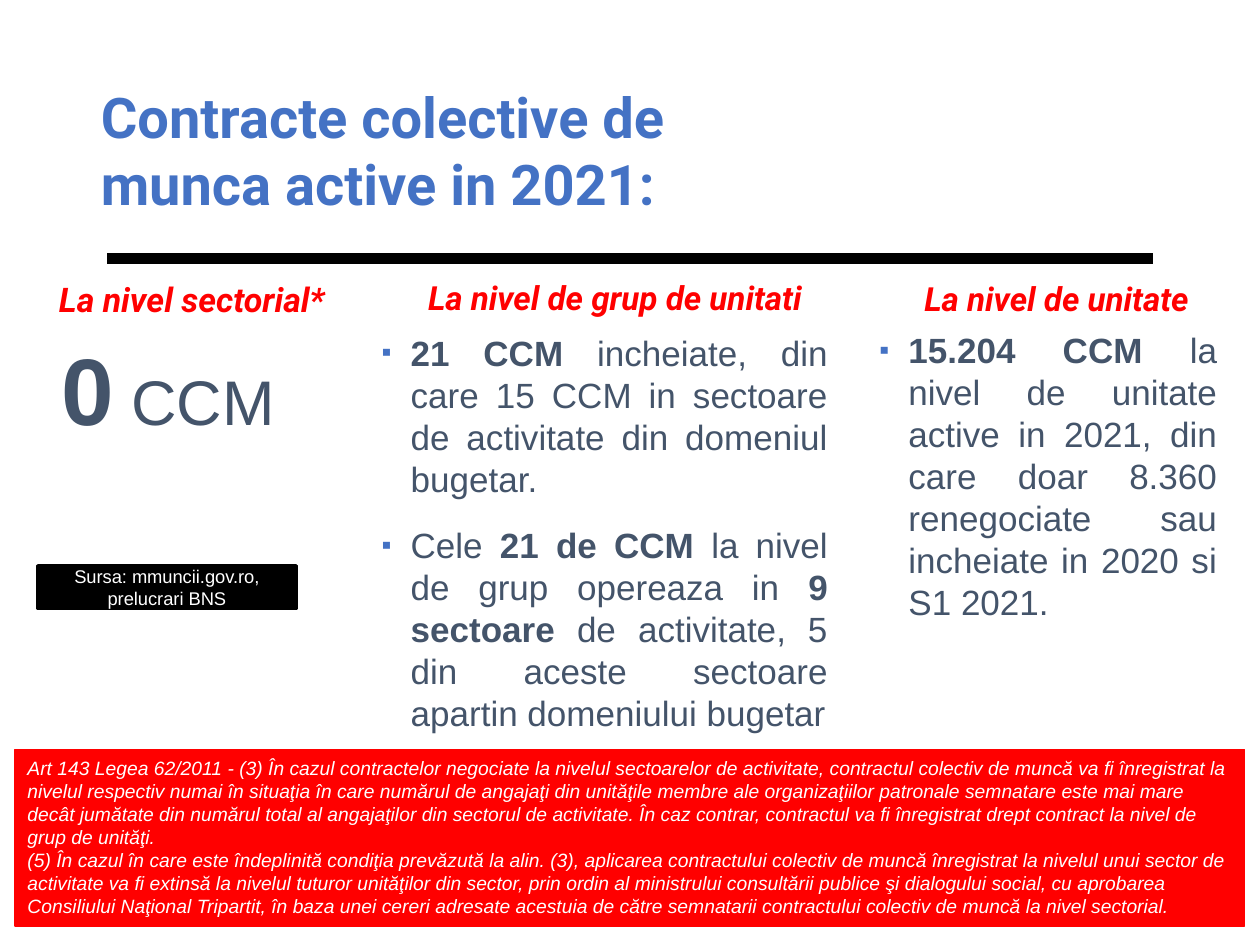
from pptx import Presentation
from pptx.dml.color import RGBColor
from pptx.enum.shapes import MSO_CONNECTOR, MSO_SHAPE
from pptx.enum.text import MSO_ANCHOR, MSO_AUTO_SIZE, PP_ALIGN
from pptx.oxml.ns import qn
from pptx.util import Inches, Pt
from lxml import etree

LEFT, MID, JUST = PP_ALIGN.LEFT, PP_ALIGN.CENTER, PP_ALIGN.JUSTIFY
TOP, CORE, BASE = MSO_ANCHOR.TOP, MSO_ANCHOR.MIDDLE, MSO_ANCHOR.BOTTOM
RECT, LINE = MSO_SHAPE.RECTANGLE, MSO_CONNECTOR.STRAIGHT
GROW = MSO_AUTO_SIZE.SHAPE_TO_FIT_TEXT
BLUE, SLATE, RED, BLACK, WHITE = "4472C4", "44546A", "FF0000", "000000", "FFFFFF"

LAW = [
    "Art 143 Legea 62/2011 - (3) În cazul contractelor negociate la nivelul "
    "sectoarelor de activitate, contractul colectiv de muncă va fi înregistrat "
    "la nivelul respectiv numai în situaţia în care numărul de angajaţi din "
    "unităţile membre ale organizaţiilor patronale semnatare este mai mare "
    "decât jumătate din numărul total al angajaţilor din sectorul de "
    "activitate. În caz contrar, contractul va fi înregistrat drept contract "
    "la nivel de grup de unităţi.",
    "(5) În cazul în care este îndeplinită condiţia prevăzută la alin. (3), "
    "aplicarea contractului colectiv de muncă înregistrat la nivelul unui "
    "sector de activitate va fi extinsă la nivelul tuturor unităţilor din "
    "sector, prin ordin al ministrului consultării publice şi dialogului "
    "social, cu aprobarea Consiliului Naţional Tripartit, în baza unei cereri "
    "adresate acestuia de către semnatarii contractului colectiv de muncă la "
    "nivel sectorial.",
]


def color(code):
    return RGBColor.from_string(code)


def add_run(para, text, size, code, face="Arial", bold=False, slant=False):
    run = para.add_run()
    run.text = text
    font = run.font
    font.name, font.size = face, Pt(size)
    font.bold, font.italic = bold, slant
    font.color.rgb = color(code)


def indent(para, left, first):
    props = para._p.get_or_add_pPr()
    props.set("marL", str(Inches(left)))
    props.set("indent", str(Inches(first)))
    return props


def add_mark(para):
    props = indent(para, 0.23, -0.23)
    tint = etree.SubElement(props, qn("a:buClr"))
    etree.SubElement(tint, qn("a:srgbClr"), val=BLUE)
    etree.SubElement(props, qn("a:buSzPct"), val="80000")
    etree.SubElement(props, qn("a:buFont"), typeface="Arial")
    etree.SubElement(props, qn("a:buChar"), char="▪")


def add_box(slide, area, anchor=TOP, inset=True):
    frame = slide.shapes.add_textbox(*map(Inches, area)).text_frame
    frame.word_wrap = True
    frame.vertical_anchor = anchor
    if not inset:
        frame.margin_left = frame.margin_right = 0
        frame.margin_top = frame.margin_bottom = 0
    return frame


def add_rule(slide, left, right, top):
    rule = slide.shapes.add_connector(
        LINE, Inches(left), Inches(top), Inches(right), Inches(top))
    rule.line.color.rgb = color(BLACK)
    rule.line.width = Pt(6)
    etree.SubElement(rule._element.spPr, qn("a:effectLst"))


def add_title(slide, area, text):
    para = add_box(slide, area, BASE, False).paragraphs[0]
    indent(para, 0.2, 0)
    add_run(para, text, 32, BLUE, "Roboto", True)


def add_head(slide, area, text, align, size=19):
    para = add_box(slide, area).paragraphs[0]
    indent(para, 0.49, -0.42)
    para.alignment = align
    add_run(para, text, size, RED, "Roboto", True, True)


def add_total(slide, area, count, unit):
    para = add_box(slide, area, inset=False).paragraphs[0]
    para.alignment = MID
    add_run(para, count, 54, SLATE, bold=True)
    add_run(para, unit, 36, SLATE)


def add_list(slide, area, items):
    frame = add_box(slide, area, inset=False)
    for i, item in enumerate(items):
        para = frame.add_paragraph() if i else frame.paragraphs[0]
        add_mark(para)
        para.alignment = JUST
        para.space_after = Pt(10)
        if i:
            para.space_before = Pt(4)
        for text, bold in item:
            add_run(para, text, 20, SLATE, bold=bold)


def add_panel(slide, area, code, width, texts, size, align, anchor, slant=False):
    panel = slide.shapes.add_shape(RECT, *map(Inches, area))
    panel.shadow.inherit = False
    panel.fill.solid()
    panel.fill.fore_color.rgb = color(code)
    panel.line.color.rgb = color(code)
    panel.line.width = Pt(width)
    frame = panel.text_frame
    frame.word_wrap = True
    frame.vertical_anchor = anchor
    for i, text in enumerate(texts):
        para = frame.add_paragraph() if i else frame.paragraphs[0]
        para.alignment = align
        add_run(para, text, size, WHITE, slant=slant)
    return frame


def main():
    deck = Presentation()
    deck.slide_width, deck.slide_height = Inches(10), Inches(7.5)
    slide = deck.slides.add_slide(deck.slide_layouts[6])

    # Title and rule
    add_rule(slide, 0.85, 9.15, 2.05)
    add_title(slide, (0.6, 0.52, 5.49, 1.2),
              "Contracte colective de munca active in 2021:")

    # Sector level
    add_head(slide, (0.3, 2.16, 2.57, 0.52), "La nivel sectorial*", LEFT, 19.4)
    add_total(slide, (0.28, 2.63, 2.11, 1.1), "0", " CCM")

    # Group level
    add_head(slide, (3.03, 2.15, 3.63, 0.47), "La nivel de grup de unitati", MID)
    add_list(slide, (3.03, 2.63, 3.54, 3.33), [
        [("21 CCM ", True),
         ("incheiate, din care 15 CCM in sectoare de activitate din "
          "domeniul bugetar.", False)],
        [("Cele ", False), ("21 de CCM ", True),
         ("la nivel de grup opereaza in ", False), ("9 sectoare", True),
         (" de activitate, 5 din aceste sectoare apartin domeniului "
          "bugetar", False)],
    ])

    # Unit level
    add_head(slide, (6.97, 2.16, 2.76, 0.49), "La nivel de unitate", MID)
    add_list(slide, (6.98, 2.61, 2.68, 2.9), [
        [("15.204 CCM ", True),
         ("la nivel de unitate active in 2021, din care doar 8.360 "
          "renegociate sau incheiate in 2020 si S1 2021.", False)],
    ])

    # Source and legal note
    add_panel(slide, (0.3, 4.49, 2.05, 0.34), BLACK, 2,
              ["Sursa: mmuncii.gov.ro, prelucrari BNS"], 10.5, MID, CORE)
    note = add_panel(slide, (0.12, 5.95, 9.76, 1.4), RED, 0.75,
                     LAW, 11, LEFT, TOP, True)
    note.auto_size = GROW

    deck.save("out.pptx")


if __name__ == "__main__":
    main()
